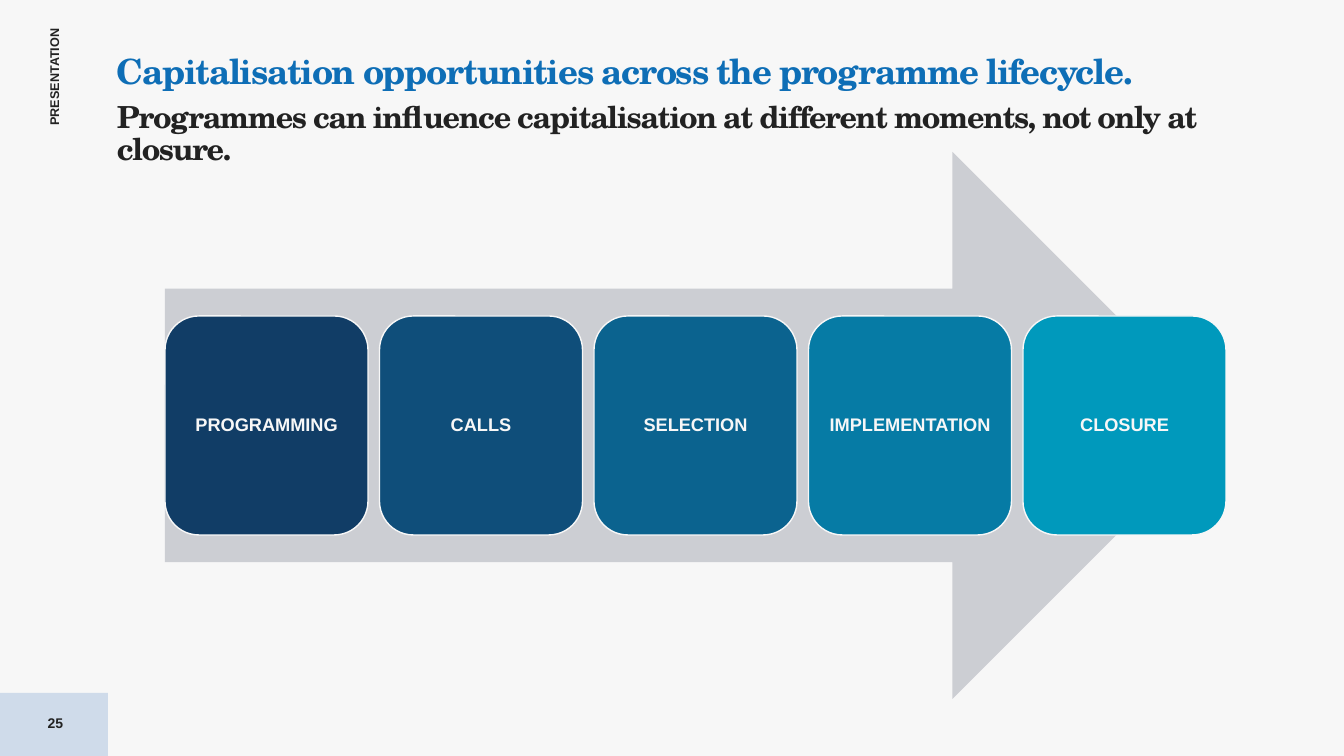
from pptx import Presentation
from pptx.dml.color import RGBColor
from pptx.enum.shapes import MSO_SHAPE as Shape
from pptx.enum.text import MSO_ANCHOR as Anchor, PP_ALIGN as Align
from pptx.util import Emu, Pt

# Content
SECTION = "PRESENTATION"
PAGE_NUMBER = "25"
HEADINGS = [
    ("Capitalisation opportunities across the programme lifecycle.", 24.8, "blue"),
    ("Programmes can influence capitalisation at different moments, not only at closure.",
     21.7, "ink"),
]
STAGES = [
    ("PROGRAMMING", "113D66"),
    ("CALLS", "0F4E7A"),
    ("SELECTION", "0B638F"),
    ("IMPLEMENTATION", "067BA5"),
    ("CLOSURE", "0099BC"),
]
COLORS = {"paper": "F7F7F7", "ink": "222222", "blue": "0E6EB6",
          "arrow": "CCCED3", "corner": "CFDBEA"}
SANS, SERIF = "Arial", "TeX Gyre Schola"

# Layout in px
SCALE = 914400 / 100.8
ARROW = (165, 152, 1061, 547)
CARD_W, CARD_H = 203, 219


def px(value):
    return Emu(round(value * SCALE))


def rgb(color):
    return RGBColor.from_string(COLORS.get(color, color))


def style(paragraph, size, color, face=SANS):
    font = paragraph.runs[0].font
    font.name, font.size, font.bold = face, Pt(size), True
    font.color.rgb = rgb(color)


def set_frame(frame, inset=0, anchor=Anchor.TOP, wrap=True):
    frame.margin_left = frame.margin_right = px(inset)
    frame.margin_top = frame.margin_bottom = px(inset)
    frame.vertical_anchor, frame.word_wrap = anchor, wrap
    return frame


def add_block(kind, box, color):
    block = slide.shapes.add_shape(kind, *map(px, box))
    block.shadow.inherit = False
    block.fill.solid()
    block.fill.fore_color.rgb = rgb(color)
    block.line.fill.background()
    return block


def add_text(box):
    return slide.shapes.add_textbox(*map(px, box))


prs = Presentation()
prs.slide_width, prs.slide_height = px(1344), px(756)
slide = prs.slides.add_slide(prs.slide_layouts[6])
slide.background.fill.solid()
slide.background.fill.fore_color.rgb = rgb("paper")

# Page furniture
add_block(Shape.RECTANGLE, (0, 693, 108, 63), "corner")

section = add_text((4, 68, 100, 15))
section.rotation = 270
section_frame = set_frame(section.text_frame, wrap=False)
section_frame.text = SECTION
style(section_frame.paragraphs[0], 9, "ink")

page_frame = set_frame(add_text((0, 703, 111, 40)).text_frame, anchor=Anchor.MIDDLE)
page_frame.text = PAGE_NUMBER
page_frame.paragraphs[0].alignment = Align.CENTER
style(page_frame.paragraphs[0], 10, "ink")

# Lifecycle arrow with evenly spaced stages
add_block(Shape.RIGHT_ARROW, ARROW, "arrow")
left, top, width, height = ARROW
pitch = (width - CARD_W) / (len(STAGES) - 1)
card_top = top + (height - CARD_H) / 2
for i, (stage, color) in enumerate(STAGES):
    card = add_block(Shape.ROUNDED_RECTANGLE,
                     (left + i * pitch, card_top, CARD_W, CARD_H), color)
    card.line.color.rgb = rgb("paper")
    card.line.width = Pt(1)
    card_frame = set_frame(card.text_frame, 5, Anchor.MIDDLE)
    card_frame.text = stage
    label = card_frame.paragraphs[0]
    label.alignment, label.line_spacing = Align.CENTER, 0.9
    style(label, 13, "paper")

# Headings
heading_frame = set_frame(add_text((117, 56, 1183, 127)).text_frame)
heading_frame.text = "\n".join(text for text, _, _ in HEADINGS)
for heading, (_, size, color) in zip(heading_frame.paragraphs, HEADINGS):
    heading.line_spacing, heading.space_after = 0.87, Pt(8)
    style(heading, size, color, SERIF)
    heading.runs[0].font._element.set("spc", "-100")  # tighter letter spacing

prs.save("out.pptx")
